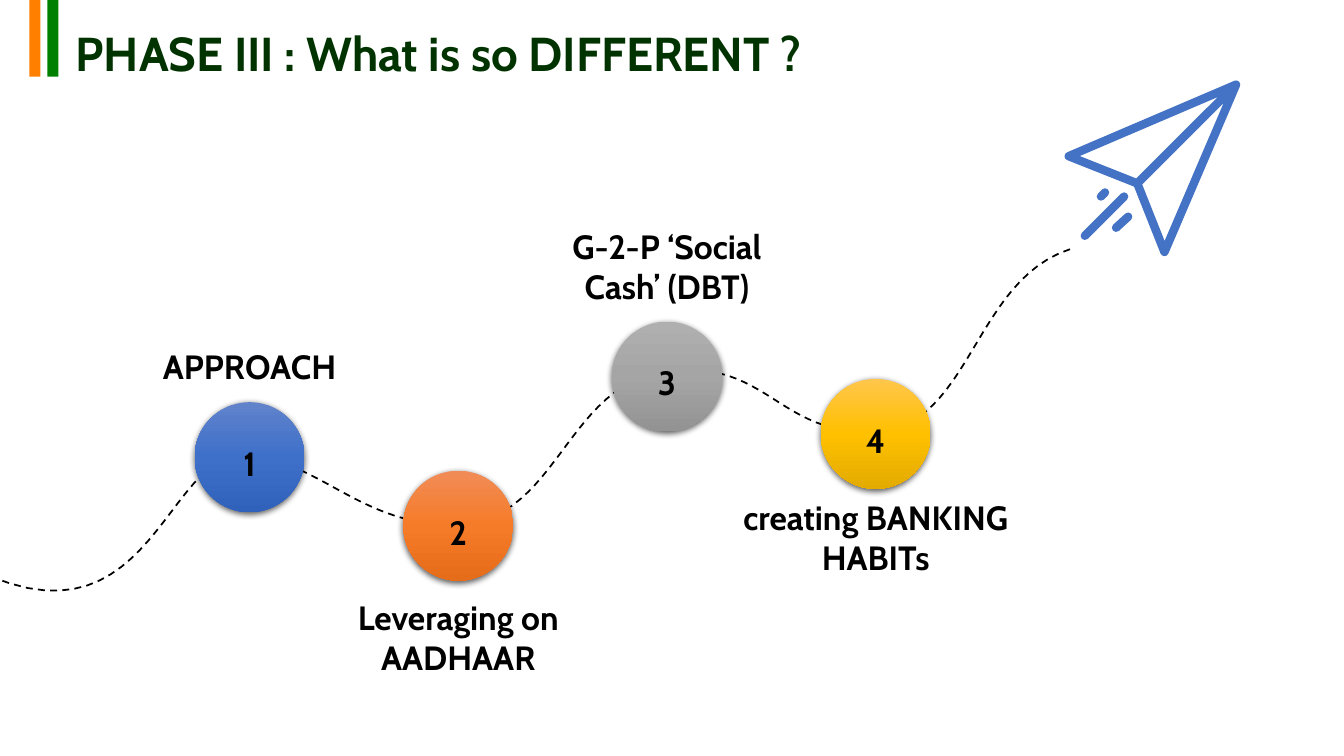
import copy
from dataclasses import dataclass

import pptx
import pptx.dml.color
import pptx.enum.dml
import pptx.enum.shapes
import pptx.enum.text
import pptx.oxml
import pptx.oxml.ns
import pptx.util
from lxml import etree

Inches = pptx.util.Inches
Pt = pptx.util.Pt
qn = pptx.oxml.ns.qn


@dataclass(frozen=True)
class Theme:
    """Colours, font and type sizes of the slide."""

    font: str = "Cabin"
    title_size: int = 34
    label_size: int = 24
    title: str = "003300"
    text: str = "000000"
    plane: str = "4472C4"
    stripes: tuple = ("FF8000", "008000")
    circles: tuple = (
        ("6183CB", "3E70CA", "3062BB"),
        ("F18C57", "F67B28", "E56C19"),
        ("AFAFAF", "A5A5A5", "939393"),
        ("FFC64B", "FFC000", "E3AB00"),
    )


THEME = Theme()
CIRCLE_SIZE = 1.09
CIRCLE_STEP = 2.07
MILESTONES = [
    ("APPROACH", 1.52, -0.61, 2.28, 0.5),
    ("Leveraging on AADHAAR", 2.2, 1.2, 2.57, 0.91),
    ("G-2-P ‘Social Cash’ (DBT)", 0.72, -1.0, 2.73, 0.91),
    ("creating BANKING HABITs", 1.29, 1.12, 3.29, 0.91),
]
TRAIL_START = (0, 3.25)
TRAIL_CURVES = [
    ((1.59, 3.91), (1.75, 2.03), (2.5, 2.05)),
    ((3.24, 2.06), (3.69, 2.79), (4.66, 2.73)),
    ((5.63, 2.67), (5.71, 1.33), (6.71, 1.21)),
    ((7.71, 1.09), (7.81, 1.86), (8.77, 1.81)),
    ((9.72, 1.77), (9.74, 0.31), (10.71, 0)),
]
PLANE_STROKES = [
    [(0.72, 1.02), (0.04, 0.75), (1.7, 0.04), (0.99, 1.7), (0.72, 1.02), (1.7, 0.04)],
    [(0.2, 1.54), (0.59, 1.15)],
    [(0.51, 1.46), (0.63, 1.35)],
    [(0.36, 1.15), (0.4, 1.11)],
]


def rgb(value):
    """Turn a hex string into a colour."""
    return pptx.dml.color.RGBColor.from_string(value)


def write_text(text_frame, text, size, color, spacing=1.0, centred=True):
    """Write one bold paragraph in the slide's font."""
    text_frame.text = text
    text_frame.word_wrap = True
    paragraph = text_frame.paragraphs[0]
    align = pptx.enum.text.PP_ALIGN
    paragraph.alignment = align.CENTER if centred else align.LEFT
    paragraph.line_spacing = spacing
    font = paragraph.runs[0].font
    font.name, font.size, font.bold = THEME.font, Pt(size), True
    font.color.rgb = rgb(color)


def add_strokes(slide, left, top, strokes, color, width):
    """Draw unfilled strokes as one freeform, relative to left and top."""
    placed = [[(Inches(left + x), Inches(top + y)) for x, y in stroke] for stroke in strokes]
    builder = slide.shapes.build_freeform(*placed[0][0])
    for index, points in enumerate(placed):
        if index:
            builder.move_to(*points[0])
        builder.add_line_segments(points[1:], close=False)
    shape = builder.convert_to_shape()
    shape.shadow.inherit = False
    shape.fill.background()
    shape.line.color.rgb = rgb(color)
    shape.line.width = Pt(width)
    return shape


def bezier_points(start, curves, steps=24):
    """Sample a chain of cubic curves into points."""
    points = [start]
    for first, second, end in curves:
        for step in range(1, steps + 1):
            t = step / steps
            weights = ((1 - t) ** 3, 3 * t * (1 - t) ** 2, 3 * t * t * (1 - t), t**3)
            corners = (start, first, second, end)
            points.append(
                tuple(sum(w * corner[axis] for w, corner in zip(weights, corners)) for axis in (0, 1))
            )
        start = end
    return points


def add_header(slide, left, top, width, height):
    """Place the two stripes and the title."""
    for index, color in enumerate(THEME.stripes):
        stripe = slide.shapes.add_shape(
            pptx.enum.shapes.MSO_SHAPE.RECTANGLE,
            Inches(left + 0.18 * index), Inches(top), Inches(0.11), Inches(height),
        )
        stripe.shadow.inherit = False
        stripe.fill.solid()
        stripe.fill.fore_color.rgb = rgb(color)
        stripe.line.fill.background()
    title = slide.shapes.title
    title.left, title.top = Inches(left + 0.36), Inches(top + 0.28)
    title.width, title.height = Inches(width - 0.36), Inches(0.55)
    text_frame = title.text_frame
    write_text(text_frame, "PHASE III : What is so DIFFERENT ?",
               THEME.title_size, THEME.title, 0.9, centred=False)
    text_frame.auto_size = pptx.enum.text.MSO_AUTO_SIZE.NONE
    text_frame.vertical_anchor = pptx.enum.text.MSO_ANCHOR.MIDDLE


def add_trail(slide, left, top):
    """Draw the dashed flight path."""
    trail = add_strokes(slide, left, top, [bezier_points(TRAIL_START, TRAIL_CURVES)], THEME.text, 1.25)
    trail.line.dash_style = pptx.enum.dml.MSO_LINE.DASH


def add_plane(slide, left, top):
    """Draw the paper plane with rounded strokes."""
    plane = add_strokes(slide, left, top, PLANE_STROKES, THEME.plane, 6)
    line = plane.line._get_or_add_ln()
    line.set("cap", "rnd")
    etree.SubElement(line, qn("a:round"))


def add_circle(slide, left, top, number, colors):
    """Draw a numbered circle with a gradient and a soft shadow."""
    circle = slide.shapes.add_shape(
        pptx.enum.shapes.MSO_SHAPE.OVAL,
        Inches(left), Inches(top), Inches(CIRCLE_SIZE), Inches(CIRCLE_SIZE),
    )
    circle.line.fill.background()
    circle.fill.gradient()
    circle.fill.gradient_angle = 270
    properties = circle._element.spPr
    stops = properties.find(".//" + qn("a:gsLst"))
    stops.insert(1, copy.deepcopy(stops[0]))
    for index, (stop, color) in enumerate(zip(circle.fill.gradient_stops, colors)):
        stop.position = index / 2
        stop.color.rgb = rgb(color)
    circle.shadow.inherit = False
    shadow = etree.SubElement(
        properties.find(qn("a:effectLst")), qn("a:outerShdw"),
        blurRad=str(Pt(4.5)), dist=str(Pt(1.5)), dir="5400000", algn="ctr", rotWithShape="0",
    )
    shade = etree.SubElement(shadow, qn("a:srgbClr"), val=THEME.text)
    etree.SubElement(shade, qn("a:alpha"), val="63000")
    circle.text_frame.vertical_anchor = pptx.enum.text.MSO_ANCHOR.MIDDLE
    write_text(circle.text_frame, str(number), THEME.label_size, THEME.text, 1.3)


def add_milestones(slide, left, top):
    """Place the circles at even steps, each with a label centred on it."""
    for index, (text, drop, offset, width, height) in enumerate(MILESTONES):
        circle_left, circle_top = left + index * CIRCLE_STEP, top + drop
        add_circle(slide, circle_left, circle_top, index + 1, THEME.circles[index])
        label = slide.shapes.add_textbox(
            Inches(circle_left + (CIRCLE_SIZE - width) / 2), Inches(circle_top + offset),
            Inches(width), Inches(height),
        )
        write_text(label.text_frame, text, THEME.label_size, THEME.text)


def main():
    """Build the slide and save it."""
    presentation = pptx.Presentation()
    presentation.slide_width, presentation.slide_height = Inches(13.33), Inches(7.5)
    slide = presentation.slides.add_slide(presentation.slide_layouts[5])
    add_header(slide, 0.29, 0, 13.04, 0.76)
    add_trail(slide, -0.09, 2.47)
    add_milestones(slide, 1.93, 2.47)
    add_plane(slide, 10.56, 0.8)
    presentation.save("out.pptx")


if __name__ == "__main__":
    main()
